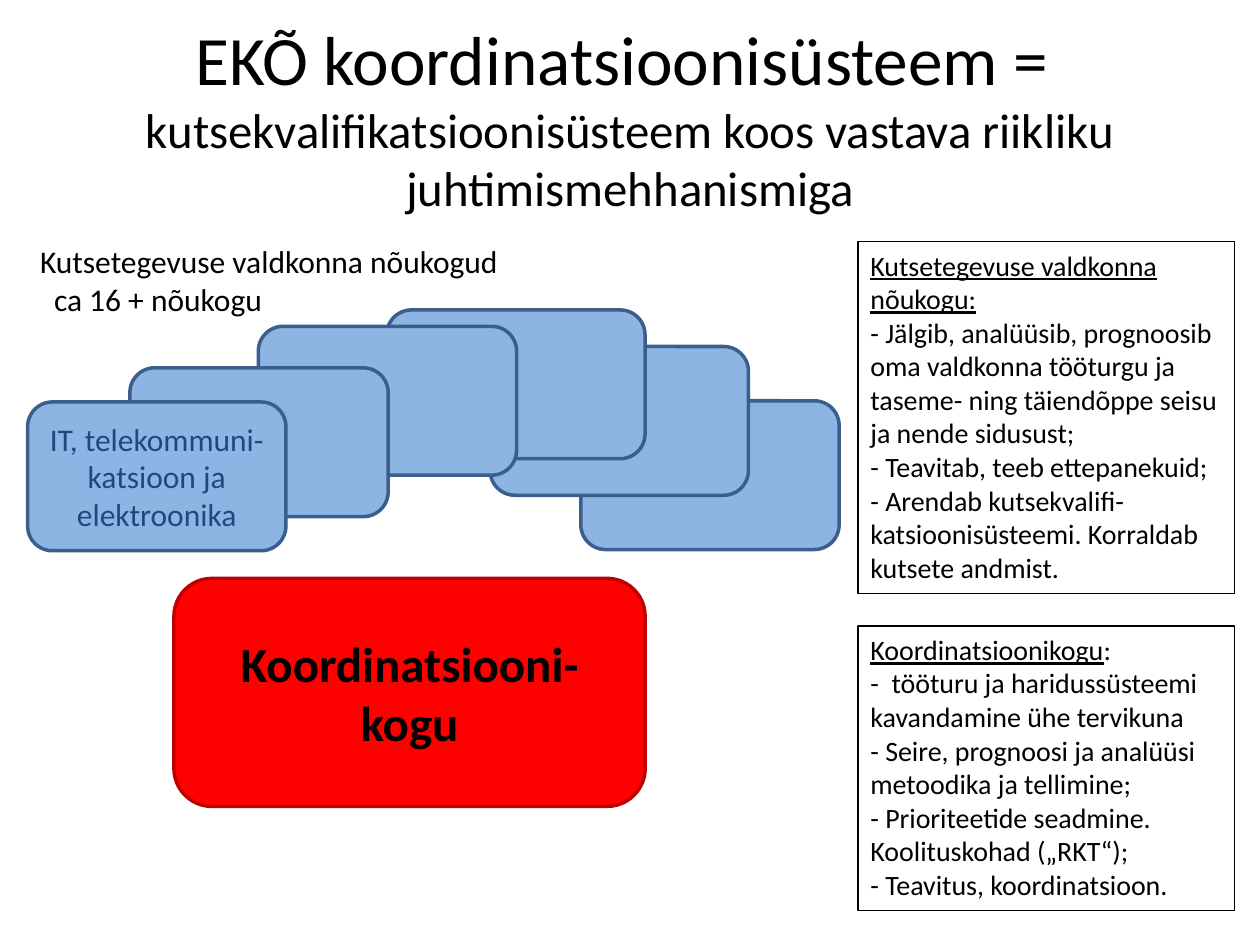
from pptx import Presentation
from pptx.dml.color import RGBColor
from pptx.enum.shapes import MSO_SHAPE
from pptx.enum.text import MSO_ANCHOR, PP_ALIGN
from pptx.util import Pt

ROUNDED = MSO_SHAPE.ROUNDED_RECTANGLE
MIDDLE, TOP = MSO_ANCHOR.MIDDLE, MSO_ANCHOR.TOP
CENTER, LEFT = PP_ALIGN.CENTER, PP_ALIGN.LEFT

BLACK = RGBColor(0x00, 0x00, 0x00)
NAVY = RGBColor(0x1F, 0x49, 0x7D)
COUNCIL_FILL = RGBColor(0x8E, 0xB4, 0xE3)
COUNCIL_LINE = RGBColor(0x3A, 0x5F, 0x8C)
RED = RGBColor(0xFF, 0x00, 0x00)
DARK_RED = RGBColor(0xC0, 0x00, 0x00)

COUNCIL_SIZE = (147.6, 85)
# Left and top of each council card, from back to front
COUNCIL_PLACES = [(331.9, 229), (280.1, 198), (221, 177.1),
                  (147.6, 186.5), (74.2, 210.2), (15.8, 229.7)]

COUNCIL_DUTIES = [
    "- Jälgib, analüüsib, prognoosib oma valdkonna tööturgu ja taseme- ning "
    "täiendõppe seisu ja nende sidusust;",
    "- Teavitab, teeb ettepanekuid;",
    "- Arendab kutsekvalifi-katsioonisüsteemi. Korraldab kutsete andmist.",
]
COORDINATION_DUTIES = [
    "-  tööturu ja haridussüsteemi kavandamine ühe tervikuna",
    "- Seire, prognoosi ja analüüsi metoodika ja tellimine;",
    "- Prioriteetide seadmine. Koolituskohad („RKT“);",
    "- Teavitus, koordinatsioon.",
]


def style_paragraph(paragraph, size, color=BLACK, align=LEFT, bold=False):
    paragraph.alignment = align
    font = paragraph.font
    font.name, font.size, font.bold = "Calibri", Pt(size), bold
    font.color.rgb = color


def write_lines(frame, lines, size, **style):
    for i, line in enumerate(lines):
        paragraph = frame.add_paragraph() if i else frame.paragraphs[0]
        paragraph.add_run().text = line
        style_paragraph(paragraph, size, **style)


def add_text_frame(slide, box, anchor=TOP, wrap=True):
    text_box = slide.shapes.add_textbox(*map(Pt, box))
    frame = text_box.text_frame
    frame.word_wrap, frame.vertical_anchor = wrap, anchor
    return text_box, frame


def add_card(slide, box, fill, line):
    card = slide.shapes.add_shape(ROUNDED, *map(Pt, box))
    card.shadow.inherit = False
    card.fill.solid()
    card.fill.fore_color.rgb = fill
    card.line.color.rgb = line
    card.line.width = Pt(2)
    card.text_frame.word_wrap = True
    card.text_frame.vertical_anchor = MIDDLE
    return card


def add_title(slide, box):
    _, frame = add_text_frame(slide, box, MIDDLE)
    paragraph = frame.paragraphs[0]
    style_paragraph(paragraph, 27.9, align=CENTER)
    headline = paragraph.add_run()
    headline.text = "EKÕ koordinatsioonisüsteem = "
    headline.font.size = Pt(39.6)
    paragraph.add_line_break()
    paragraph.add_run().text = ("kutsekvalifikatsioonisüsteem koos vastava "
                                "riikliku juhtimismehhanismiga")


def add_councils(slide, places, size):
    for place in places:
        council = add_card(slide, place + size, COUNCIL_FILL, COUNCIL_LINE)
    # Only the front card is labelled
    write_lines(council.text_frame, ["IT, telekommuni-katsioon ja elektroonika"],
                18, color=NAVY, align=CENTER)


def add_councils_heading(slide, box):
    _, frame = add_text_frame(slide, box, wrap=False)
    write_lines(frame, ["Kutsetegevuse valdkonna nõukogud", "ca 16 + nõukogu"], 18)
    # Indent the count slightly under the heading
    frame.paragraphs[1]._p.get_or_add_pPr().set("marL", str(Pt(8)))


def add_coordination_body(slide, box):
    body = add_card(slide, box, RED, DARK_RED)
    write_lines(body.text_frame, ["Koordinatsiooni-", "kogu"], 28,
                align=CENTER, bold=True)


def add_duties(slide, box, heading, duties, heading_end=""):
    panel, frame = add_text_frame(slide, box)
    panel.line.color.rgb = BLACK
    panel.line.width = Pt(0.75)
    write_lines(frame, [heading] + duties, 16)
    first = frame.paragraphs[0]
    first.runs[0].font.underline = True
    if heading_end:
        first.add_run().text = heading_end


def main():
    prs = Presentation()
    prs.slide_width, prs.slide_height = Pt(720), Pt(540)
    slide = prs.slides.add_slide(prs.slide_layouts[6])

    add_title(slide, (36, 21.6, 648, 90))
    add_councils(slide, COUNCIL_PLACES, COUNCIL_SIZE)
    add_councils_heading(slide, (15.8, 134.6, 279.4, 51.1))
    add_coordination_body(slide, (99.4, 330.5, 269.3, 130.3))
    add_duties(slide, (490.3, 357.8, 215.3, 162.7), "Koordinatsioonikogu",
               COORDINATION_DUTIES, ":")
    add_duties(slide, (490.3, 138.2, 215.3, 200.9),
               "Kutsetegevuse valdkonna nõukogu:", COUNCIL_DUTIES)

    prs.save("out.pptx")


if __name__ == "__main__":
    main()
